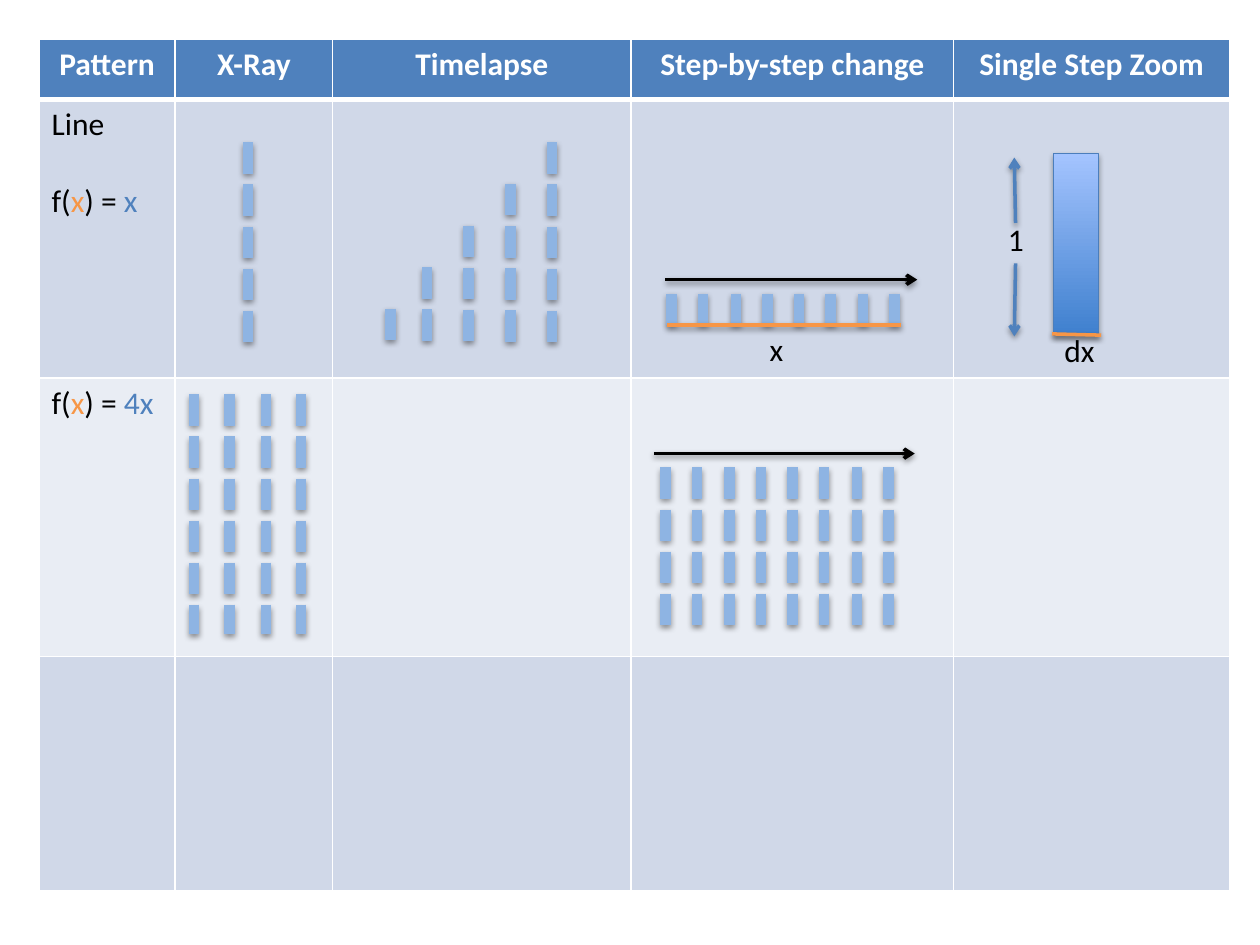
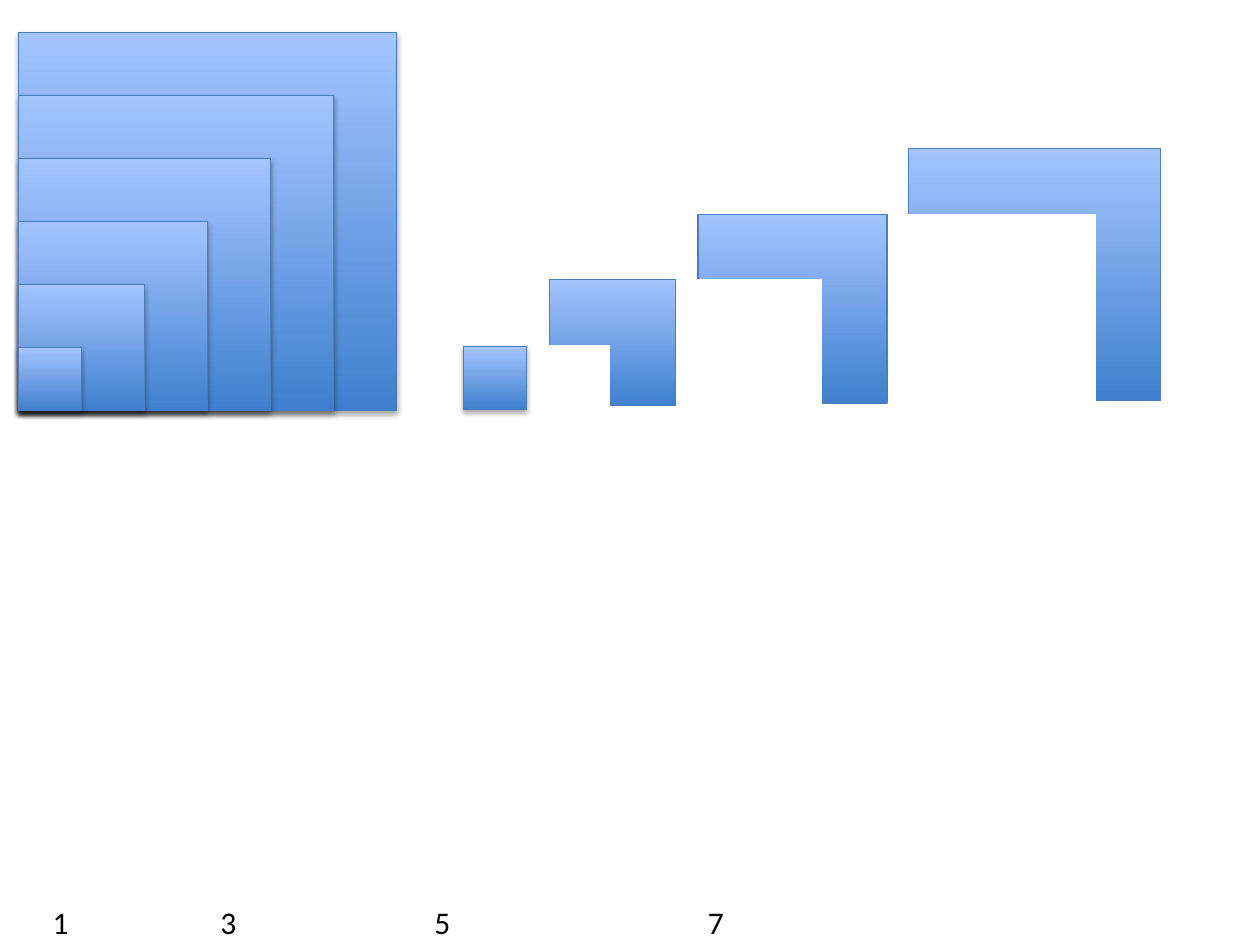
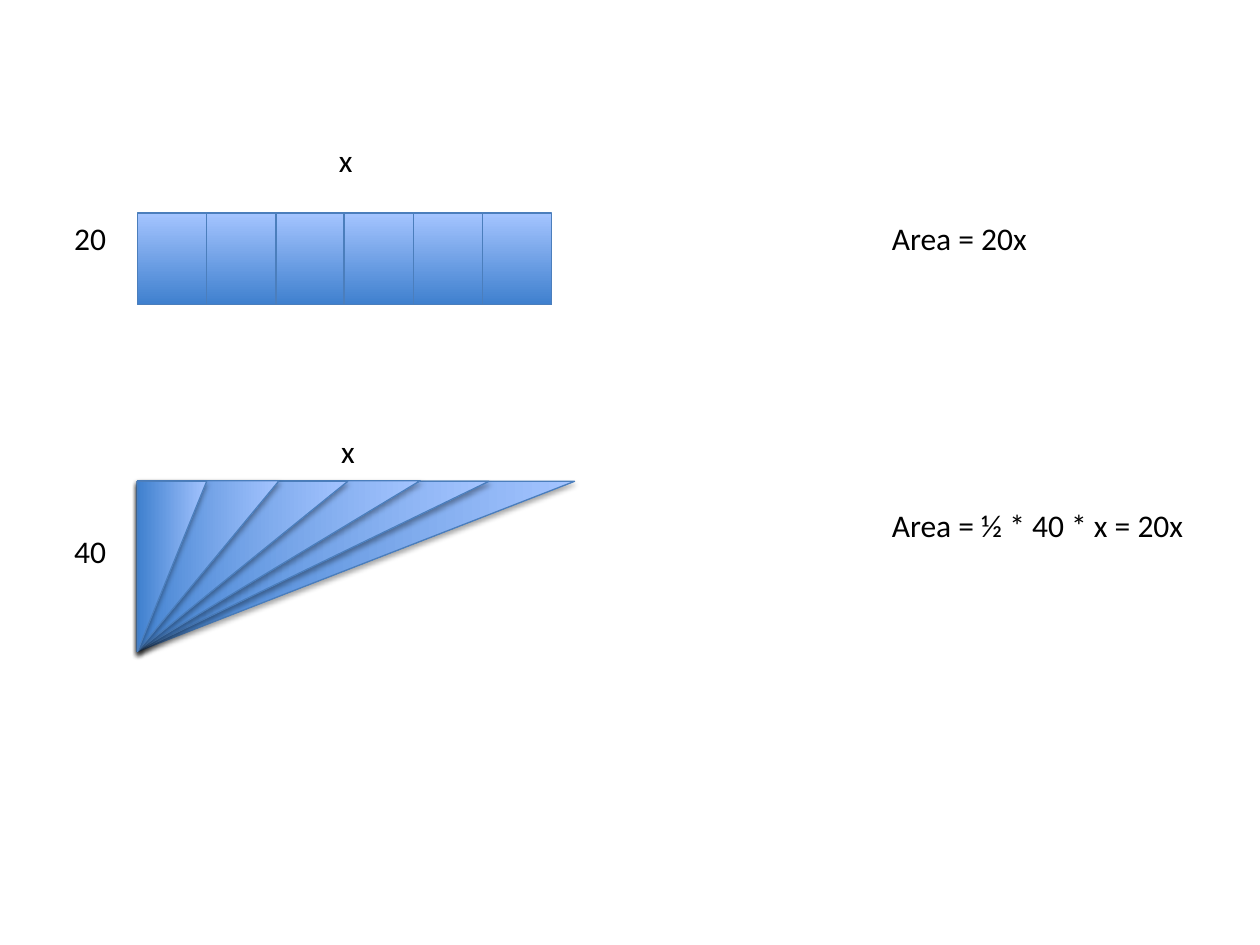
from dataclasses import dataclass
from typing import Optional

from lxml import etree
from pptx import Presentation
from pptx.dml.color import RGBColor
from pptx.enum.dml import MSO_LINE
from pptx.enum.shapes import MSO_CONNECTOR, MSO_SHAPE
from pptx.enum.text import MSO_AUTO_SIZE, PP_ALIGN
from pptx.oxml.ns import qn
from pptx.util import Pt

EMU_PER_PX = 9144
FONT = "Calibri"
TEXT_SIZE = 18
BLANK_LAYOUT = 6

SYS_DASH = MSO_LINE.SQUARE_DOT
STRAIGHT = MSO_CONNECTOR.STRAIGHT
RECTANGLE = MSO_SHAPE.RECTANGLE
RIGHT_TRIANGLE = MSO_SHAPE.RIGHT_TRIANGLE
CENTER = PP_ALIGN.CENTER
FIT_TEXT = MSO_AUTO_SIZE.SHAPE_TO_FIT_TEXT

COLORS = {
    "white": "FFFFFF",
    "black": "000000",
    "blue": "4F81BD",
    "pale_blue": "8EB4E3",
    "orange": "F79646",
    "band_dark": "D0D8E8",
    "band_light": "E9EDF4",
    "gradient_bottom": "3F80CE",
    "gradient_top": "A4C4FF",
    "outline": "4B7EBC",
}


@dataclass(frozen=True)
class Block:
    left: int
    top: int
    width: int
    height: int
    preset: MSO_SHAPE = RECTANGLE
    rotation: int = 0
    shadow: bool = True
    plain: Optional[str] = None


@dataclass(frozen=True)
class Stroke:
    x1: int
    y1: int
    x2: int
    y2: int
    color: str = "pale_blue"
    weight: int = 6
    dashed: bool = False
    arrow: bool = False


@dataclass(frozen=True)
class Label:
    text: str
    left: int
    top: int
    width: int
    wrap: bool = False


@dataclass(frozen=True)
class Part:
    text: str
    color: str = "black"


HEADINGS = ["Pattern", "X-Ray", "Timelapse", "Step-by-step change", "Single Step Zoom"]
COLUMN_WIDTHS = [108, 125, 237, 256, 219]
ROW_HEIGHTS = [48, 221, 221, 186]
ROW_FILLS = ["blue", "band_dark", "band_light", "band_dark"]


def px(length: int) -> int:
    return length * EMU_PER_PX


def rgb(name: str) -> RGBColor:
    return RGBColor.from_string(COLORS[name])


def spread(first: int, last: int, count: int) -> list[int]:
    return [round(first + i * (last - first) / (count - 1)) for i in range(count)]


def add_shadow(effects, distance: int, opacity: int) -> None:
    outer = etree.SubElement(
        effects, qn("a:outerShdw"), blurRad="40000", dist=str(distance),
        dir="5400000", rotWithShape="0")
    color = etree.SubElement(outer, qn("a:srgbClr"), val=COLORS["black"])
    etree.SubElement(color, qn("a:alpha"), val=str(opacity * 1000))


def style_run(run, color: str = "black", bold: bool = False) -> None:
    run.font.name = FONT
    run.font.size = Pt(TEXT_SIZE)
    run.font.bold = bold
    run.font.color.rgb = rgb(color)


def draw_block(slide, block: Block) -> None:
    shape = slide.shapes.add_shape(
        block.preset, px(block.left), px(block.top), px(block.width), px(block.height))
    shape.rotation = block.rotation
    if block.plain:
        shape.fill.solid()
        shape.fill.fore_color.rgb = rgb(block.plain)
    else:
        shape.fill.gradient()
        shape.fill.gradient_angle = 90
        for stop, color in zip(shape.fill.gradient_stops, ("gradient_bottom", "gradient_top")):
            stop.color.rgb = rgb(color)
    shape.line.color.rgb = rgb(block.plain or "outline")
    shape.line.width = Pt(0.75)
    shape.shadow.inherit = False
    if block.shadow:
        add_shadow(shape.element.spPr.find(qn("a:effectLst")), 23000, 35)


def draw_stroke(slide, stroke: Stroke) -> None:
    connector = slide.shapes.add_connector(
        STRAIGHT, px(stroke.x1), px(stroke.y1), px(stroke.x2), px(stroke.y2))
    connector.line.color.rgb = rgb(stroke.color)
    connector.line.width = Pt(stroke.weight)
    if stroke.dashed:
        connector.line.dash_style = SYS_DASH
    properties = connector.element.spPr
    if stroke.arrow:
        etree.SubElement(properties.find(qn("a:ln")), qn("a:tailEnd"), type="arrow")
    add_shadow(etree.SubElement(properties, qn("a:effectLst")), 20000, 38)


def draw_label(slide, label: Label) -> None:
    box = slide.shapes.add_textbox(px(label.left), px(label.top), px(label.width), px(40))
    frame = box.text_frame
    frame.text = label.text
    frame.word_wrap = label.wrap
    frame.auto_size = FIT_TEXT
    style_run(frame.paragraphs[0].runs[0])


def set_borders(cell, top: int, bottom: int) -> None:
    properties = cell._tc.get_or_add_tcPr()
    for side, weight in (("L", 1), ("R", 1), ("T", top), ("B", bottom)):
        border = etree.SubElement(properties, qn(f"a:ln{side}"), w=str(Pt(weight)))
        fill = etree.SubElement(border, qn("a:solidFill"))
        etree.SubElement(fill, qn("a:srgbClr"), val=COLORS["white"])


def write_formula(paragraph, result: str) -> None:
    for part in (Part("f("), Part("x", "orange"), Part(") = "), Part(result, "blue")):
        run = paragraph.add_run()
        run.text = part.text
        style_run(run, part.color)


def draw_pattern_table(slide) -> None:
    table = slide.shapes.add_table(
        len(ROW_HEIGHTS), len(COLUMN_WIDTHS), px(31), px(31),
        px(sum(COLUMN_WIDTHS)), px(sum(ROW_HEIGHTS))).table
    for column, width in zip(table.columns, COLUMN_WIDTHS):
        column.width = px(width)
    for index, (row, height) in enumerate(zip(table.rows, ROW_HEIGHTS)):
        row.height = px(height)
        for cell in row.cells:
            set_borders(cell, 3 if index == 1 else 1, 3 if index == 0 else 1)
            cell.fill.solid()
            cell.fill.fore_color.rgb = rgb(ROW_FILLS[index])
    for cell, heading in zip(table.rows[0].cells, HEADINGS):
        cell.text_frame.text = heading
        paragraph = cell.text_frame.paragraphs[0]
        paragraph.alignment = CENTER
        style_run(paragraph.runs[0], "white", bold=True)

    line_pattern = table.cell(1, 0).text_frame
    line_pattern.text = "Line"
    style_run(line_pattern.paragraphs[0].runs[0])
    formula = line_pattern.add_paragraph()
    formula.space_before = Pt(22)
    write_formula(formula, "x")
    write_formula(table.cell(2, 0).text_frame.paragraphs[0], "4x")


def build_patterns(slide) -> None:
    draw_pattern_table(slide)
    step_row = [Stroke(x, 233, x, 258) for x in spread(533, 710, 8)]
    step_grid = [Stroke(x, 371, x, 497, dashed=True) for x in spread(528, 705, 8)]
    xray_line = [Stroke(197, 113, 197, 278, dashed=True)]
    xray_grid = [Stroke(x, 313, x, 503, dashed=True) for x in spread(154, 239, 4)]
    timelapse = [
        Stroke(x, 245 - 33 * i, x, 277, dashed=True)
        for i, x in enumerate((310, 339, 372, 405, 438))]
    directions = [
        Stroke(528, 222, 728, 222, "black", 2, arrow=True),
        Stroke(519, 360, 726, 360, "black", 2, arrow=True)]
    zoom_height = [
        Stroke(806, 177, 805, 125, "blue", 2, arrow=True),
        Stroke(806, 209, 805, 267, "blue", 2, arrow=True)]
    step_base = Stroke(529, 258, 715, 258, "orange", 2)
    zoom_base = Stroke(835, 265, 874, 266, "orange", 2)

    draw_block(slide, Block(836, 122, 36, 144))
    for stroke in (*directions, *step_row, *step_grid, *xray_line, *xray_grid,
                   step_base, zoom_base, *zoom_height, *timelapse):
        draw_stroke(slide, stroke)
    for label in (Label("x", 601, 257, 31), Label("dx", 835, 258, 44),
                  Label("1", 790, 170, 33)):
        draw_label(slide, label)


def build_squares(slide) -> None:
    unit = 50
    for step in range(6):
        side = unit * (6 - step)
        draw_block(slide, Block(15, 26 + unit * step, side, side))
    for left, top, side in ((436, 222, 100), (554, 170, 150), (721, 118, 200)):
        inner = side - unit
        draw_block(slide, Block(left, top, side, side, shadow=False))
        draw_block(slide, Block(left - 2, top + 52, inner, inner, shadow=False, plain="white"))
    draw_block(slide, Block(368, 275, unit, unit))
    for text, left in (("1", 32), ("3", 165), ("5", 335), ("7", 552)):
        draw_label(slide, Label(text, left, 712, 33))


def build_areas(slide) -> None:
    left, triangle_top, triangle_height = 109, 382, 135
    for base in (347, 279, 224, 167, 112, 55):
        shift = (base - triangle_height + 1) // 2
        draw_block(slide, Block(left + shift, triangle_top - shift, triangle_height, base,
                                RIGHT_TRIANGLE, rotation=90))
    for strip_left in spread(left, 383, 6):
        draw_block(slide, Block(strip_left, 169, 55, 73, shadow=False))
    for label in (
            Label("x", 259, 107, 35, wrap=True),
            Label("20", 49, 169, 73, wrap=True),
            Label("Area = 20x", 698, 169, 130),
            Label("x", 261, 338, 31),
            Label("40", 49, 417, 46),
            Label("Area = ½ * 40 * x = 20x", 698, 397, 263)):
        draw_label(slide, label)


def main() -> None:
    deck = Presentation()
    deck.slide_width = px(1000)
    deck.slide_height = px(750)
    for build in (build_patterns, build_squares, build_areas):
        build(deck.slides.add_slide(deck.slide_layouts[BLANK_LAYOUT]))
    deck.save("out.pptx")


if __name__ == "__main__":
    main()
